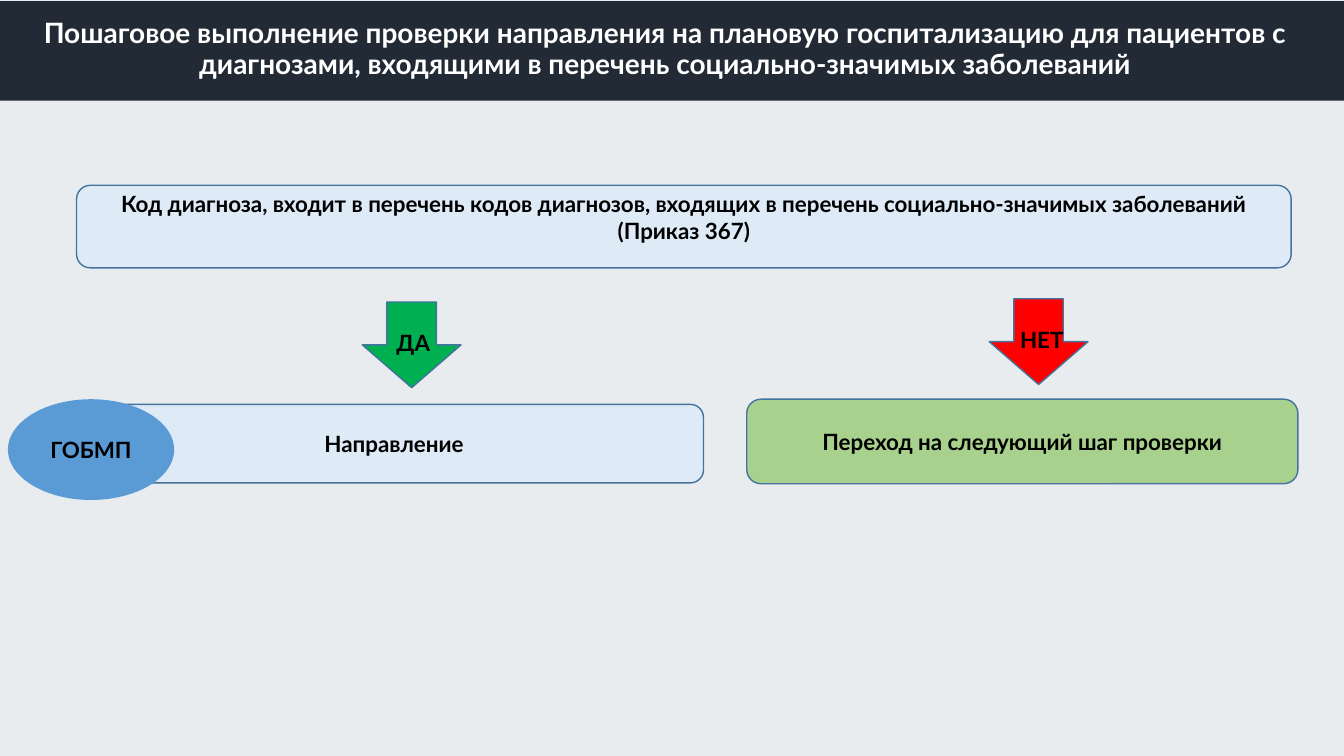
from lxml.etree import SubElement
from pptx import Presentation
from pptx.dml.color import RGBColor
from pptx.enum.shapes import MSO_SHAPE
from pptx.enum.text import MSO_ANCHOR, PP_ALIGN
from pptx.oxml.ns import qn
from pptx.util import Cm, Pt

WIDTH, HEIGHT = 33.87, 19.05
OUTLINE = "43739E"
TITLE = ("Пошаговое выполнение проверки направления на плановую госпитализацию для пациентов с "
         "диагнозами, входящими в перечень социально-значимых заболеваний")
QUESTION = ("Код диагноза, входит в перечень кодов диагнозов, входящих в перечень "
            "социально-значимых заболеваний (Приказ 367)")
ARROW_SIZE = (2.49, 2.16)

STEPS = [
    (QUESTION, MSO_SHAPE.ROUNDED_RECTANGLE, (1.93, 4.67, 30.61, 2.08), "DEEBF7", OUTLINE),
    ("Направление", MSO_SHAPE.ROUNDED_RECTANGLE, (2.13, 10.19, 15.6, 1.98), "DEEBF7", OUTLINE),
    ("Переход на следующий шаг проверки", MSO_SHAPE.ROUNDED_RECTANGLE,
     (18.82, 10.06, 13.89, 2.13), "A9D18E", OUTLINE),
    ("ГОБМП", MSO_SHAPE.OVAL, (0.2, 10.06, 4.19, 2.54), "5B9BD5", None),
]
ANSWERS = [
    ("ДА", (9.13, 7.61), (9.45, 8.18, 1.93, 0.94), "00B050"),
    ("НЕТ", (24.93, 7.53), (25.15, 8.1, 2.21, 0.94), "FF0000"),
]


def paint(target, color):
    target.solid()
    target.fore_color.rgb = RGBColor.from_string(color)


def write(frame, text, size=16, color="000000", anchor=MSO_ANCHOR.MIDDLE):
    frame.text = text
    frame.word_wrap = True
    frame.vertical_anchor = anchor
    paragraph = frame.paragraphs[0]
    paragraph.alignment = PP_ALIGN.CENTER
    font = paragraph.runs[0].font
    font.name, font.size, font.bold = "Lato", Pt(size), True
    paint(font.fill, color)
    return paragraph


def draw(slide, kind, box, fill, line=None):
    shape = slide.shapes.add_shape(kind, *map(Cm, box))
    shape.shadow.inherit = False
    paint(shape.fill, fill)
    if line:
        paint(shape.line.fill, line)
        shape.line.width = Pt(1)
    else:
        shape.line.fill.background()
    return shape


def label(slide, box, text, **style):
    frame = slide.shapes.add_textbox(*map(Cm, box)).text_frame
    return write(frame, text, **style)


def main():
    deck = Presentation()
    deck.slide_width, deck.slide_height = Cm(WIDTH), Cm(HEIGHT)
    slide = deck.slides.add_slide(deck.slide_layouts[6])

    tint = draw(slide, MSO_SHAPE.RECTANGLE, (0, -0.05, WIDTH, HEIGHT + 0.05), "2C4A64")
    tint_color = tint.fill._xPr.find(qn("a:solidFill"))[0]
    SubElement(tint_color, qn("a:alpha"), val="10000")

    draw(slide, MSO_SHAPE.RECTANGLE, (0, 0.03, WIDTH, 2.51), "222A35")
    heading = label(slide, (0, 0.46, 33.53, 1.6), TITLE, size=20, color="FFFFFF")
    heading.line_spacing = 0.9

    for text, kind, box, fill, line in STEPS:
        step = draw(slide, kind, box, fill, line)
        write(step.text_frame, text)
        if text == QUESTION:
            step.text_frame.vertical_anchor = MSO_ANCHOR.TOP
            step.text_frame.margin_top = Cm(0.03)

    for text, corner, text_box, fill in ANSWERS:
        draw(slide, MSO_SHAPE.DOWN_ARROW, corner + ARROW_SIZE, fill, OUTLINE)
        label(slide, text_box, text, anchor=MSO_ANCHOR.TOP)

    deck.save("out.pptx")


if __name__ == "__main__":
    main()
